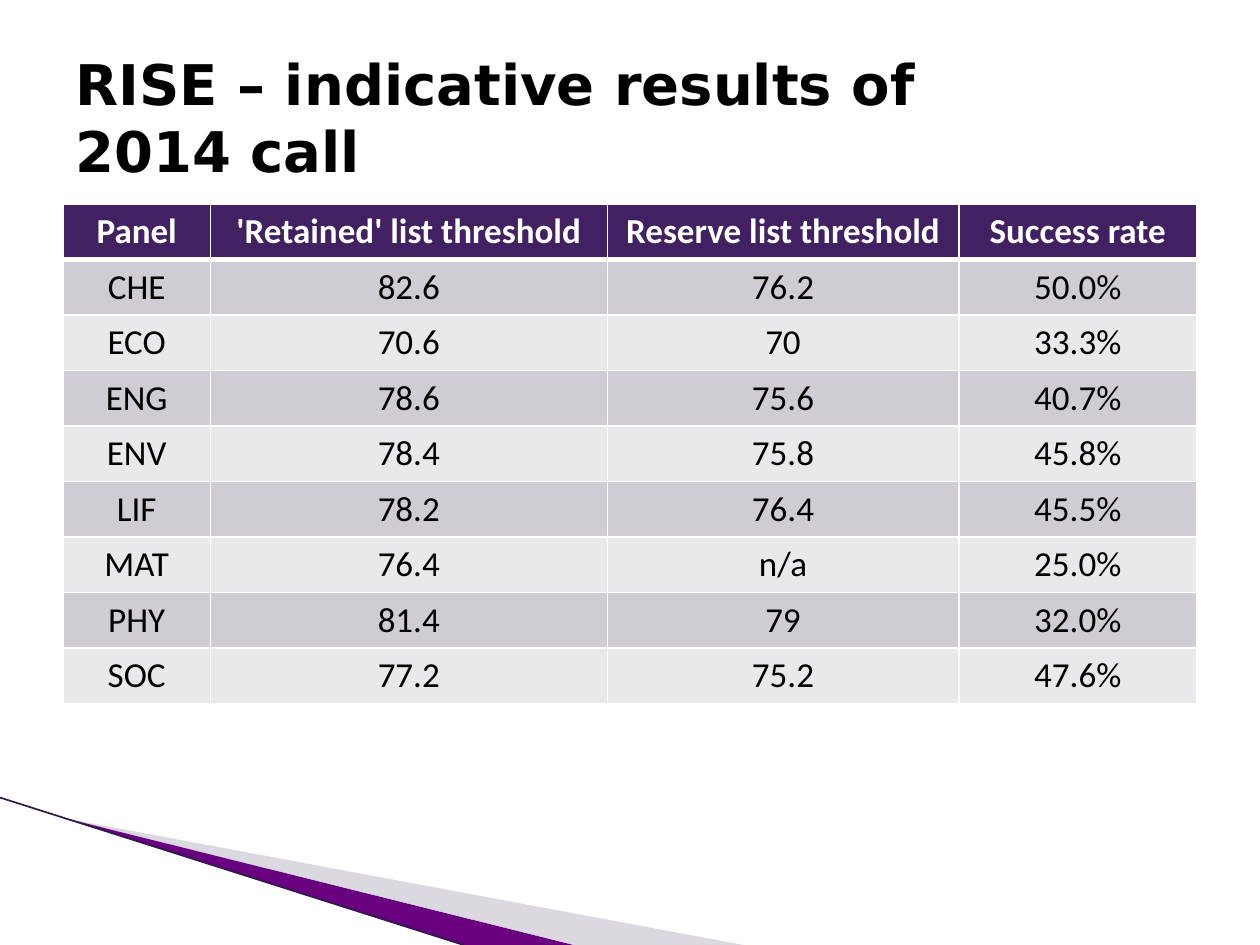
from lxml.etree import SubElement
from pptx import Presentation
from pptx.dml.color import RGBColor
from pptx.enum.shapes import MSO_CONNECTOR
from pptx.enum.text import MSO_ANCHOR, PP_ALIGN
from pptx.oxml import parse_xml
from pptx.oxml.ns import nsdecls, qn
from pptx.util import Inches, Pt

COLUMNS, ROWS = 100, 75
UNIT = Inches(0.1)

COLORS = {
    "header": "422163",
    "odd_row": "CFCDD3",
    "even_row": "E9E8EA",
    "rule": "FFFFFF",
    "header_text": "FFFFFF",
    "text": "000000",
    "pale_wedge": "A7A2B1",
    "purple_wedge": "68007F",
    "edge": "2E1A47",
}

TITLE = "RISE – indicative results of 2014 call"
HEADINGS = ["Panel", "'Retained' list threshold", "Reserve list threshold", "Success rate"]
RESULTS = [
    ("CHE", "82.6", "76.2", "50.0%"),
    ("ECO", "70.6", "70", "33.3%"),
    ("ENG", "78.6", "75.6", "40.7%"),
    ("ENV", "78.4", "75.8", "45.8%"),
    ("LIF", "78.2", "76.4", "45.5%"),
    ("MAT", "76.4", "n/a", "25.0%"),
    ("PHY", "81.4", "79", "32.0%"),
    ("SOC", "77.2", "75.2", "47.6%"),
]
COLUMN_SHARES = [0.13, 0.35, 0.31, 0.21]


def grid(*cells):
    """Turn grid columns or rows into lengths."""
    return [round(cell * UNIT) for cell in cells]


def color(key):
    return RGBColor.from_string(COLORS[key])


def style_font(paragraph, face, size, color_key, bold):
    font = paragraph.font
    font.name, font.size, font.bold = face, Pt(size), bold
    font.color.rgb = color(color_key)


def add_wedge(slide, box, points, color_key, opacity=100):
    left, top, _, _ = box
    corners = [grid(left + x, top + y) for x, y in points]
    builder = slide.shapes.build_freeform(*corners[0])
    builder.add_line_segments(corners[1:], close=True)
    wedge = builder.convert_to_shape()
    wedge.shadow.inherit = False
    wedge.fill.solid()
    wedge.fill.fore_color.rgb = color(color_key)
    wedge.line.fill.background()
    if opacity < 100:
        tint = wedge.fill._xPr.find(qn("a:solidFill"))[0]
        SubElement(tint, qn("a:alpha")).set("val", str(opacity * 1000))


def add_corner_decoration(slide, box):
    """Two wedges and an edge line fanning out from the left of the box."""
    left, top, width, height = box
    tip = (5.4, 1.7)
    add_wedge(slide, box, [tip, (width, height), (45.6, height)], "pale_wedge", 40)
    add_wedge(slide, box, [tip, (45.5, height), (36.8, height)], "purple_wedge")
    edge = slide.shapes.add_connector(
        MSO_CONNECTOR.STRAIGHT, *grid(left, top, left + 36.8, top + height))
    edge.line.color.rgb = color("edge")
    edge.line.width = Pt(0.95)
    SubElement(edge._element.spPr, qn("a:effectLst"))


def add_title(slide, box):
    frame = slide.shapes.add_textbox(*grid(*box)).text_frame
    frame.word_wrap = True
    frame.vertical_anchor = MSO_ANCHOR.MIDDLE
    frame.text = TITLE
    style_font(frame.paragraphs[0], "DejaVu Sans", 32, "text", True)


def set_borders(cell, widths):
    """Draw the cell's rules; widths maps L, R, T, B to points."""
    properties = cell._tc.get_or_add_tcPr()
    for position, (side, width) in enumerate(widths.items()):
        properties.insert(position, parse_xml(
            f'<a:ln{side} {nsdecls("a")} w="{Pt(width)}"><a:solidFill>'
            f'<a:srgbClr val="{COLORS["rule"]}"/></a:solidFill></a:ln{side}>'))


def fill_cell(cell, text, row):
    is_header = row == 0
    fill_key = "header" if is_header else "odd_row" if row % 2 else "even_row"
    cell.fill.solid()
    cell.fill.fore_color.rgb = color(fill_key)
    cell.vertical_anchor = MSO_ANCHOR.MIDDLE
    cell.text = text
    paragraph = cell.text_frame.paragraphs[0]
    paragraph.alignment = PP_ALIGN.CENTER
    style_font(paragraph, "Calibri", 20, "header_text" if is_header else "text", is_header)
    set_borders(cell, {"L": 1, "R": 1, "T": 3 if row == 1 else 1, "B": 3 if is_header else 1})


def add_results_table(slide, box):
    records = [HEADINGS, *RESULTS]
    _, _, width, height = box
    table = slide.shapes.add_table(len(records), len(HEADINGS), *grid(*box)).table
    for column, share in zip(table.columns, COLUMN_SHARES):
        column.width = round(width * share * UNIT)
    for row, record in enumerate(records):
        table.rows[row].height = round(height / len(records) * UNIT)
        for column, text in enumerate(record):
            fill_cell(table.cell(row, column), text, row)


def main():
    presentation = Presentation()
    presentation.slide_width, presentation.slide_height = grid(COLUMNS, ROWS)
    slide = presentation.slides.add_slide(presentation.slide_layouts[6])
    add_corner_decoration(slide, (0, 63.3, 59, ROWS - 63.3))
    add_results_table(slide, (5, 16.2, 90, 36.9))
    add_title(slide, (5, 3, 78.9, 12.5))
    presentation.save("out.pptx")


if __name__ == "__main__":
    main()
